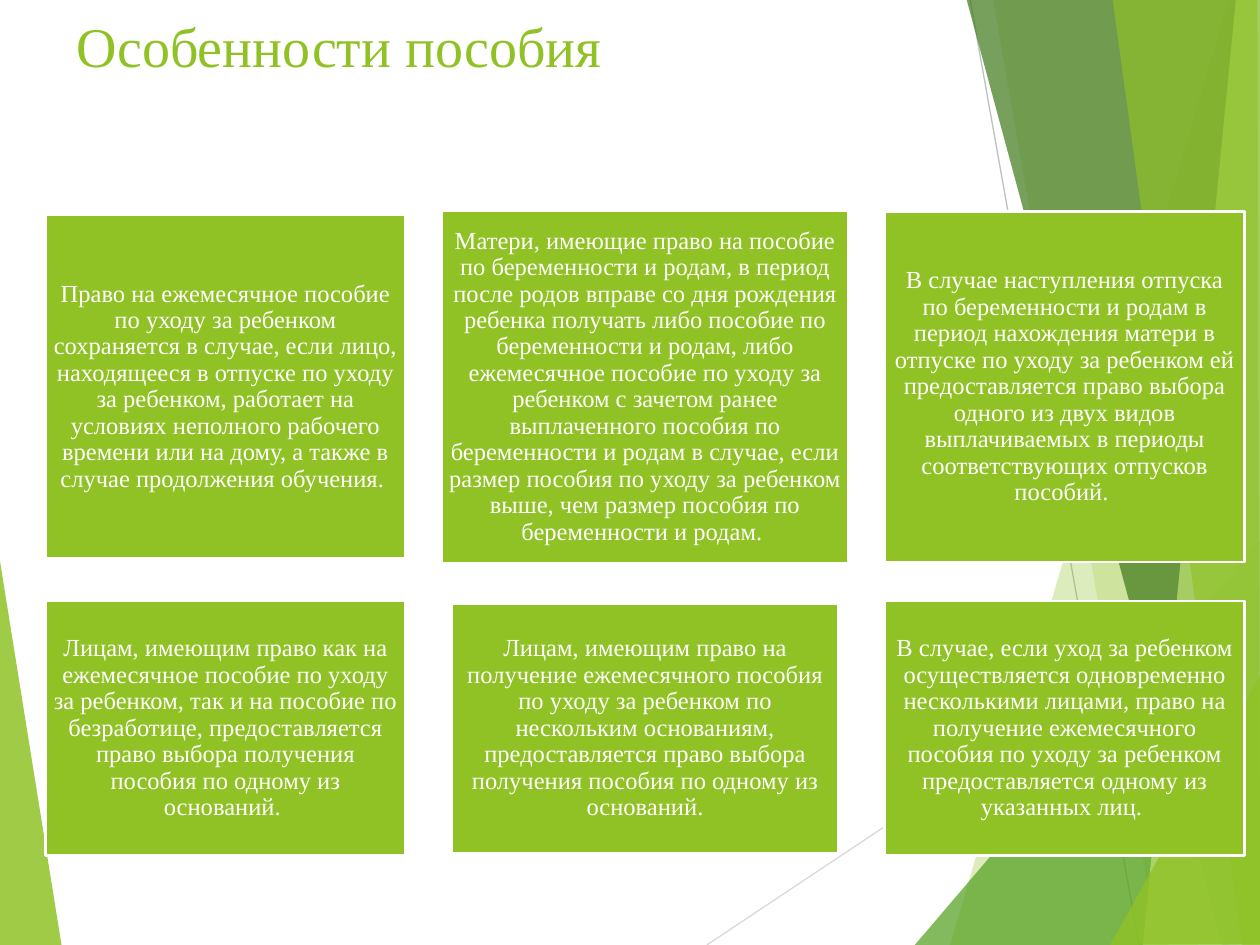
import lxml.etree
import pptx
import pptx.dml.color
import pptx.enum.shapes
import pptx.enum.text
import pptx.oxml.ns
import pptx.util

Inches, Pt, qn = pptx.util.Inches, pptx.util.Pt, pptx.oxml.ns.qn
ANCHOR = pptx.enum.text.MSO_ANCHOR
ALIGN = pptx.enum.text.PP_ALIGN
FONT = "Times New Roman"
COLORS = {
    "lime": "90C226", "green": "54A021", "forest": "3F7819", "pale": "C0E474",
    "white": "FFFFFF", "ray": "D9D9D9", "steep ray": "BFBFBF",
}


def color(name):
    return pptx.dml.color.RGBColor.from_string(COLORS[name])


def add_run(paragraph, text, size, color_name):
    run = paragraph.add_run()
    run.text = text
    run.font.name = FONT
    run.font.size = Pt(size)
    run.font.color.rgb = color(color_name)


deck = pptx.Presentation()
deck.slide_width, deck.slide_height = Inches(10), Inches(7.5)
slide = deck.slides.add_slide(deck.slide_layouts[5])
shapes = slide.shapes

# Background rays: colour, start, end
rays = [
    ("ray", (5.61, 7.5), (10.01, 4.57)),
    ("steep ray", (7.7, 0), (9.04, 7.5)),
]
for name, start, end in rays:
    ray = shapes.add_connector(
        pptx.enum.shapes.MSO_CONNECTOR.STRAIGHT, *map(Inches, start + end))
    ray.line.color.rgb = color(name)
    ray.line.width = Pt(0.75)
    lxml.etree.SubElement(ray._element.spPr, qn("a:effectLst"))

# Background facets: colour, opacity in percent, corners in hundredths of an inch
facets = [
    ("lime", 85, [(-1, 439), (49, 751), (-1, 750)]),
    ("lime", 30, [(975, 0), (754, 750), (1002, 751), (1001, 1)]),
    ("lime", 20, [(788, -1), (919, 750), (1001, 750), (1001, -1)]),
    ("green", 72, [(726, 750), (1000, 429), (1001, 750)]),
    ("forest", 70, [(767, -1), (970, 750), (1001, 749), (1001, -1)]),
    ("pale", 70, [(981, -1), (907, 750), (1001, 750), (1000, -1)]),
    ("lime", 65, [(883, -1), (986, 750), (1000, 750), (998, -1)]),
    ("lime", 80, [(881, 750), (1001, 535), (1001, 749)]),
]
for name, opacity, corners in facets:
    outline = shapes.build_freeform(*corners[0], scale=Inches(0.01))
    outline.add_line_segments(corners[1:], close=True)
    facet = outline.convert_to_shape()
    facet.shadow.inherit = False
    facet.fill.solid()
    facet.fill.fore_color.rgb = color(name)
    facet.line.fill.background()
    tint = facet._element.spPr.find(".//" + qn("a:srgbClr"))
    lxml.etree.SubElement(tint, qn("a:alpha"), val=str(opacity * 1000))

title = shapes.title
title.left, title.top = Inches(0.51), Inches(0.04)
title.width, title.height = Inches(9), Inches(1.25)
title.text_frame.vertical_anchor = ANCHOR.TOP
title.text_frame.word_wrap = True
heading = title.text_frame.paragraphs[0]
heading.alignment = ALIGN.LEFT
add_run(heading, "Особенности пособия", 32, "lime")

# Cards are centred on a grid; each has its own width, height and text
column_centers = [1.79, 5.12, 8.45]
row_centers = [3.07, 5.78]
card_rows = [
    [
        (2.86, 2.73, "Право на ежемесячное пособие по уходу за ребенком сохраняется "
         "в случае, если лицо, находящееся в отпуске по уходу за ребенком, работает "
         "на условиях неполного рабочего времени или на дому, а также в случае "
         "продолжения обучения. "),
        (3.23, 2.8, "Матери, имеющие право на пособие по беременности и родам, в период "
         "после родов вправе со дня рождения ребенка получать либо пособие по "
         "беременности и родам, либо ежемесячное пособие по уходу за ребенком с "
         "зачетом ранее выплаченного пособия по беременности и родам в случае, если "
         "размер пособия по уходу за ребенком выше, чем размер пособия по "
         "беременности и родам. "),
        (2.86, 2.78, "В случае наступления отпуска по беременности и родам в период "
         "нахождения матери в отпуске по уходу за ребенком ей предоставляется право "
         "выбора одного из двух видов выплачиваемых в периоды соответствующих "
         "отпусков пособий. "),
    ],
    [
        (2.86, 2.02, "Лицам, имеющим право как на ежемесячное пособие по уходу за "
         "ребенком, так и на пособие по безработице, предоставляется право выбора "
         "получения пособия по одному из оснований. "),
        (3.07, 1.98, "Лицам, имеющим право на получение ежемесячного пособия по уходу "
         "за ребенком по нескольким основаниям, предоставляется право выбора "
         "получения пособия по одному из оснований."),
        (2.86, 2.02, "В случае, если уход за ребенком осуществляется одновременно "
         "несколькими лицами, право на получение ежемесячного пособия по уходу за "
         "ребенком предоставляется одному из указанных лиц. "),
    ],
]
for center_y, cards in zip(row_centers, card_rows):
    for center_x, (width, height, rule) in zip(column_centers, cards):
        card = shapes.add_shape(
            pptx.enum.shapes.MSO_SHAPE.RECTANGLE,
            Inches(center_x - width / 2), Inches(center_y - height / 2),
            Inches(width), Inches(height))
        card.shadow.inherit = False
        card.fill.solid()
        card.fill.fore_color.rgb = color("lime")
        card.line.color.rgb = color("white")
        card.line.width = Pt(1.5)
        frame = card.text_frame
        frame.word_wrap = True
        frame.vertical_anchor = ANCHOR.MIDDLE
        frame.margin_left = frame.margin_right = Inches(0.06)
        frame.margin_top = frame.margin_bottom = Inches(0.06)
        paragraph = frame.paragraphs[0]
        paragraph.alignment = ALIGN.CENTER
        paragraph.line_spacing = 0.9
        paragraph.space_after = Pt(5)
        add_run(paragraph, rule, 14, "white")

deck.save("out.pptx")
